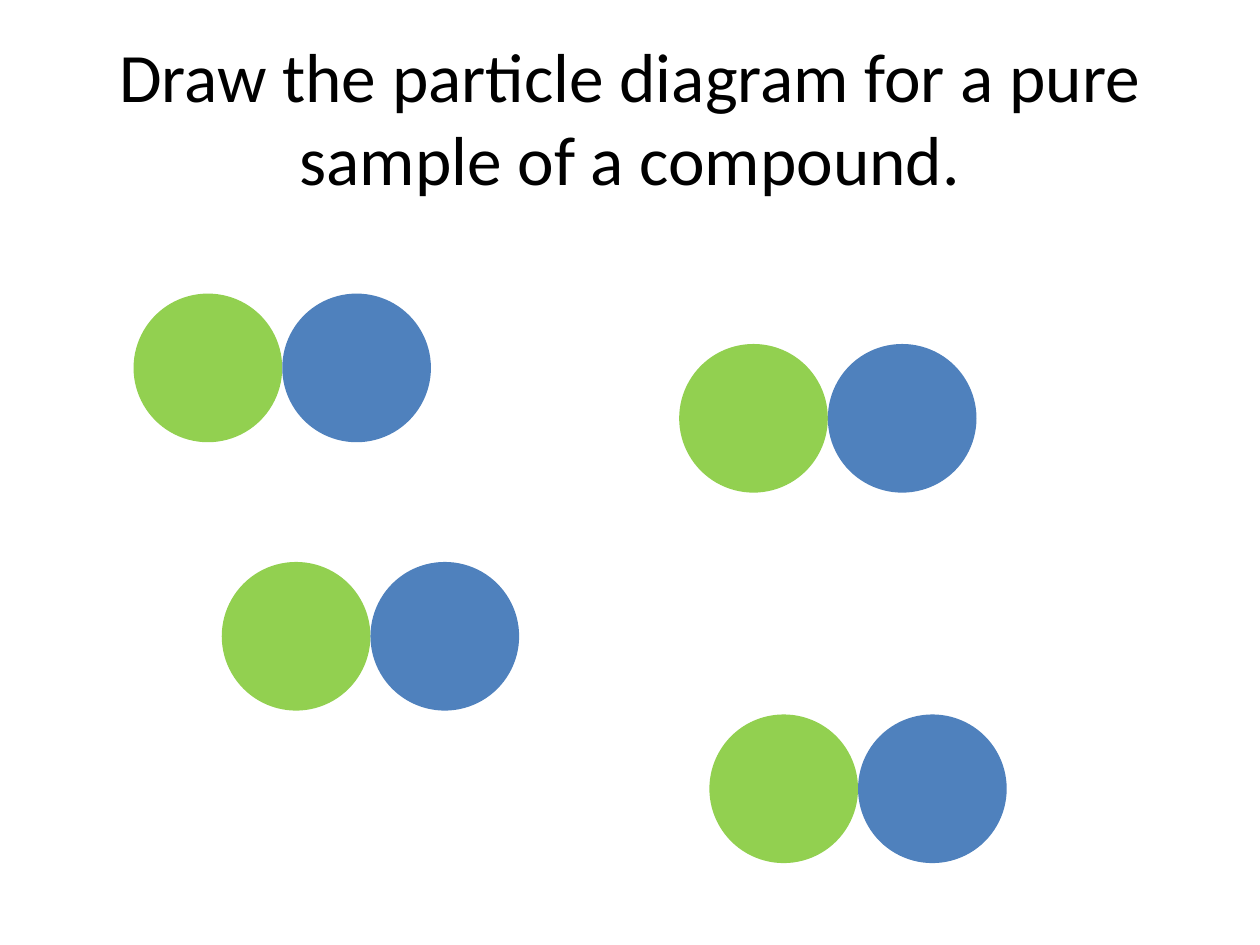
from dataclasses import dataclass

from pptx import Presentation
from pptx.dml.color import RGBColor
from pptx.enum import shapes, text
from pptx.util import Pt

PX = 9144
ATOM = 118
MOLECULES = [(176, 446), (539, 273), (563, 567), (106, 233)]


@dataclass(frozen=True)
class Theme:
    """Colours and type of the slide."""
    font: str = "Calibri"
    title_size: float = 39.6
    ink: str = "000000"
    paper: str = "FFFFFF"
    atoms: tuple = ("92D050", "4F81BD")


THEME = Theme()


def rgb(code):
    """Return the colour for a hex code."""
    return RGBColor.from_string(code)


def assign(target, values):
    """Set each named attribute on the target."""
    for name, value in values.items():
        setattr(target, name, value)


def place_title(slide, wording, left, top, width, height):
    """Put the question in the title placeholder."""
    question = slide.shapes.title
    assign(question, {"left": left * PX, "top": top * PX,
                      "width": width * PX, "height": height * PX})
    frame = question.text_frame
    frame.text = wording
    assign(frame, {"word_wrap": True, "auto_size": text.MSO_AUTO_SIZE.NONE,
                   "vertical_anchor": text.MSO_ANCHOR.MIDDLE})
    line = frame.paragraphs[0]
    line.alignment = text.PP_ALIGN.CENTER
    font = line.runs[0].font
    assign(font, {"name": THEME.font, "size": Pt(THEME.title_size)})
    font.color.rgb = rgb(THEME.ink)


def draw_molecule(slide, left, top, diameter):
    """Draw one molecule as touching atoms in a row."""
    for index, colour in enumerate(THEME.atoms):
        atom = slide.shapes.add_shape(
            shapes.MSO_SHAPE.OVAL, (left + index * diameter) * PX, top * PX,
            diameter * PX, diameter * PX)
        atom.shadow.inherit = False
        atom.fill.solid()
        atom.fill.fore_color.rgb = rgb(colour)
        atom.line.fill.background()


def main():
    """Build and save the slide."""
    deck = Presentation()
    assign(deck, {"slide_width": 1000 * PX, "slide_height": 750 * PX})
    slide = deck.slides.add_slide(deck.slide_layouts[5])
    slide.background.fill.solid()
    slide.background.fill.fore_color.rgb = rgb(THEME.paper)
    place_title(slide, "Draw the particle diagram for a pure sample of a compound.",
                50, 30, 900, 125)
    for left, top in MOLECULES:
        draw_molecule(slide, left, top, ATOM)
    deck.save("out.pptx")


if __name__ == "__main__":
    main()
